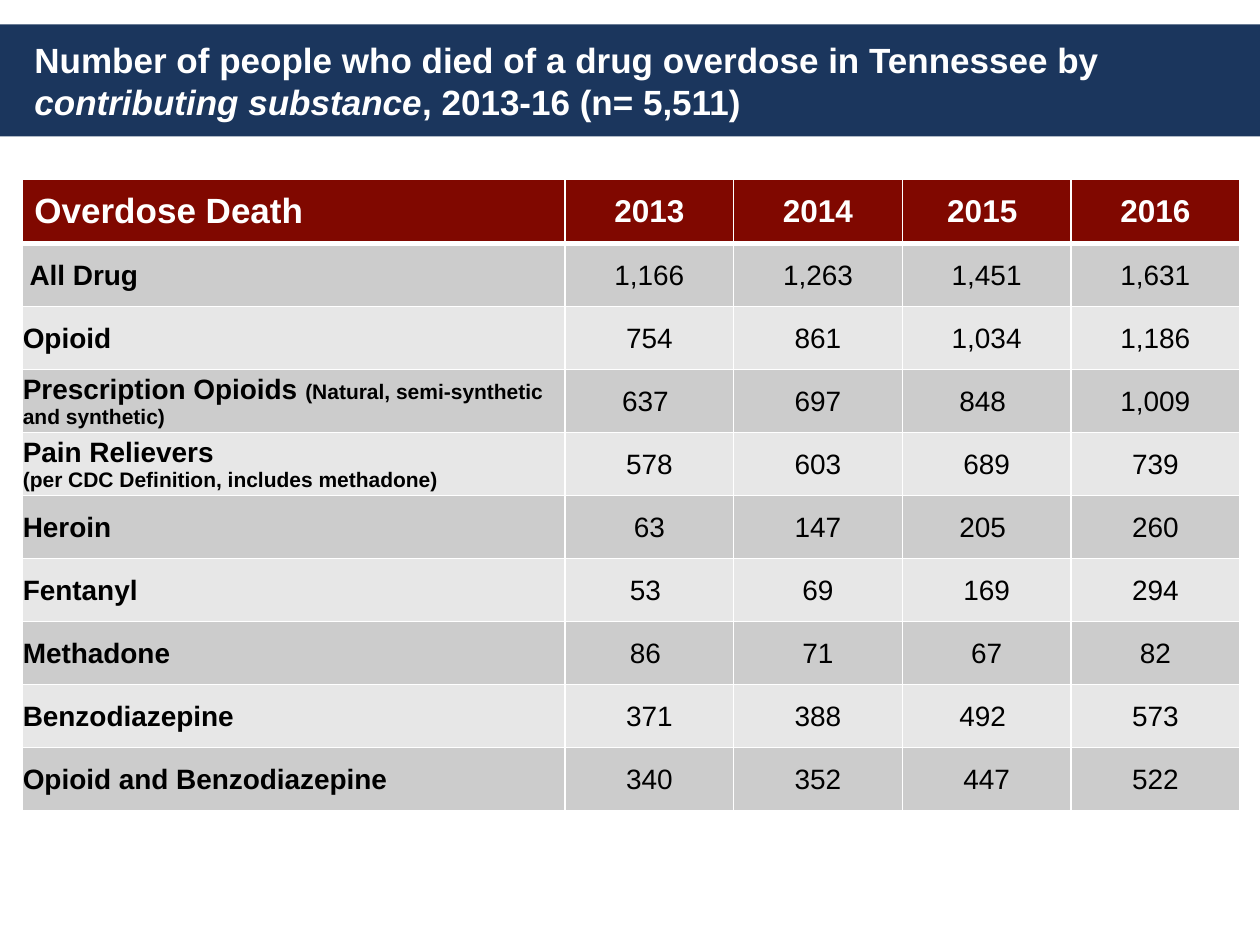
"""Build a slide with a table of Tennessee overdose deaths by substance."""

from dataclasses import dataclass

from lxml import etree
from pptx import Presentation
from pptx.dml.color import RGBColor
from pptx.enum.shapes import MSO_SHAPE
from pptx.enum.text import MSO_ANCHOR, MSO_AUTO_SIZE, PP_ALIGN
from pptx.oxml.ns import qn
from pptx.slide import Slide
from pptx.table import _Cell
from pptx.util import Cm, Pt

RECTANGLE = MSO_SHAPE.RECTANGLE
MIDDLE = MSO_ANCHOR.MIDDLE
NO_AUTOFIT = MSO_AUTO_SIZE.NONE
LEFT, CENTER = PP_ALIGN.LEFT, PP_ALIGN.CENTER

SLIDE_WIDTH, SLIDE_HEIGHT = Cm(25.4), Cm(19.05)
MARGIN = Cm(0.44)
CONTENT_WIDTH = Cm(24.55)
BAND_TOP, BAND_HEIGHT = Cm(0.49), Cm(2.26)
TABLE_TOP = Cm(3.61)
LABEL_WIDTH, YEAR_WIDTH = Cm(10.95), Cm(3.4)
HEADER_HEIGHT, ROW_HEIGHT = Cm(1.3), Cm(1.27)
CELL_INSET = Cm(0.02)


@dataclass(frozen=True)
class Theme:
    """Colours, font and type sizes of the slide."""

    font: str = "Arial"
    band: RGBColor = RGBColor(0x1B, 0x36, 0x5D)
    header: RGBColor = RGBColor(0x80, 0x08, 0x00)
    dark_row: RGBColor = RGBColor(0xCC, 0xCC, 0xCC)
    light_row: RGBColor = RGBColor(0xE7, 0xE7, 0xE7)
    white: RGBColor = RGBColor(0xFF, 0xFF, 0xFF)
    black: RGBColor = RGBColor(0, 0, 0)
    title_size: Pt = Pt(20)
    year_size: Pt = Pt(18)
    body_size: Pt = Pt(16)
    note_size: Pt = Pt(12)
    border: Pt = Pt(1)
    header_border: Pt = Pt(3)


@dataclass(frozen=True)
class Substance:
    """One table row: a substance and its deaths per year."""

    name: str
    deaths: tuple[str, ...]
    inline_note: str = ""
    note_below: str = ""


THEME = Theme()
YEARS = ("2013", "2014", "2015 ", "2016")
SUBSTANCES = (
    Substance(" All Drug", ("1,166", "1,263", "1,451", "1,631")),
    Substance("Opioid", ("754", " 861 ", "1,034", "1,186")),
    Substance("Prescription Opioids ", ("637 ", "697", "848 ", "1,009"),
              inline_note="(Natural, semi-synthetic and synthetic)"),
    Substance("Pain Relievers", ("578", "603", "689", "739"),
              note_below="(per CDC Definition, includes methadone)"),
    Substance("Heroin", ("63", "147", "205 ", "260")),
    Substance("Fentanyl", ("53 ", "69", "169", "294")),
    Substance("Methadone", ("86 ", "71", "67", "82")),
    Substance("Benzodiazepine", ("371", "388", "492 ", "573")),
    Substance("Opioid and Benzodiazepine", ("340", "352", "447", "522")),
)


def format_paragraph(paragraph, size: Pt, color: RGBColor, bold: bool, alignment=LEFT) -> None:
    """Set the font and alignment of a paragraph."""
    paragraph.alignment = alignment
    paragraph.font.name = THEME.font
    paragraph.font.size = size
    paragraph.font.bold = bold
    paragraph.font.color.rgb = color


def add_title(slide: Slide) -> None:
    """Write the title on a full-width band."""
    title = slide.shapes.title
    title.left, title.top = MARGIN, BAND_TOP
    title.width, title.height = CONTENT_WIDTH, BAND_HEIGHT
    band = slide.shapes.add_shape(RECTANGLE, 0, BAND_TOP, SLIDE_WIDTH, BAND_HEIGHT)
    band.shadow.inherit = False
    band.fill.solid()
    band.fill.fore_color.rgb = THEME.band
    band.line.fill.background()
    title.element.addprevious(band.element)

    frame = title.text_frame
    frame.auto_size = NO_AUTOFIT
    frame.vertical_anchor = MIDDLE
    paragraph = frame.paragraphs[0]
    format_paragraph(paragraph, THEME.title_size, THEME.white, True)
    paragraph.add_run().text = "Number of people who died of a drug overdose in Tennessee by "
    emphasis = paragraph.add_run()
    emphasis.text = "contributing substance"
    emphasis.font.italic = True
    paragraph.add_run().text = ", 2013-16 (n= 5,511)"


def style_cell(cell: _Cell, fill: RGBColor, top: Pt, bottom: Pt) -> None:
    """Give a cell its white borders, fill and vertical centring."""
    cell.vertical_anchor = MIDDLE
    properties = cell._tc.get_or_add_tcPr()
    widths = {"a:lnL": THEME.border, "a:lnR": THEME.border, "a:lnT": top, "a:lnB": bottom}
    for tag, width in widths.items():
        line = etree.SubElement(properties, qn(tag), w=str(width))
        solid = etree.SubElement(line, qn("a:solidFill"))
        etree.SubElement(solid, qn("a:srgbClr"), val=str(THEME.white))
    cell.fill.solid()
    cell.fill.fore_color.rgb = fill


def tighten_cell(cell: _Cell) -> None:
    """Reduce the cell margins to almost nothing."""
    cell.margin_left = cell.margin_right = cell.margin_top = CELL_INSET
    cell.margin_bottom = 0


def write_cell(cell: _Cell, text: str, size: Pt, color: RGBColor, bold: bool, alignment=LEFT) -> None:
    """Write one formatted paragraph in a cell."""
    paragraph = cell.text_frame.paragraphs[0]
    paragraph.add_run().text = text
    format_paragraph(paragraph, size, color, bold, alignment)


def write_substance(cell: _Cell, substance: Substance) -> None:
    """Write the name of a substance with its smaller note."""
    write_cell(cell, substance.name, THEME.body_size, THEME.black, True)
    if substance.inline_note:
        note = cell.text_frame.paragraphs[0].add_run()
        note.text = substance.inline_note
        note.font.size = THEME.note_size
    if substance.note_below:
        paragraph = cell.text_frame.add_paragraph()
        paragraph.add_run().text = substance.note_below
        format_paragraph(paragraph, THEME.note_size, THEME.black, True)


def add_deaths_table(slide: Slide) -> None:
    """Add the table of deaths by substance and year."""
    height = HEADER_HEIGHT + ROW_HEIGHT * len(SUBSTANCES)
    table = slide.shapes.add_table(len(SUBSTANCES) + 1, len(YEARS) + 1,
                                   MARGIN, TABLE_TOP, CONTENT_WIDTH, height).table
    table.horz_banding = False
    for index, column in enumerate(table.columns):
        column.width = YEAR_WIDTH if index else LABEL_WIDTH
    for index, row in enumerate(table.rows):
        row.height = ROW_HEIGHT if index else HEADER_HEIGHT
        fill = (THEME.dark_row if index % 2 else THEME.light_row) if index else THEME.header
        top = THEME.header_border if index == 1 else THEME.border
        bottom = THEME.border if index else THEME.header_border
        for cell in row.cells:
            style_cell(cell, fill, top, bottom)

    write_cell(table.cell(0, 0), "Overdose Death", THEME.title_size, THEME.white, True)
    for column, year in enumerate(YEARS, 1):
        cell = table.cell(0, column)
        tighten_cell(cell)
        write_cell(cell, year, THEME.year_size, THEME.white, True, CENTER)
    for row, substance in enumerate(SUBSTANCES, 1):
        for cell in table.rows[row].cells:
            tighten_cell(cell)
        write_substance(table.cell(row, 0), substance)
        for column, count in enumerate(substance.deaths, 1):
            write_cell(table.cell(row, column), count, THEME.body_size, THEME.black, False, CENTER)


def main() -> None:
    """Build and save the presentation."""
    presentation = Presentation()
    presentation.slide_width, presentation.slide_height = SLIDE_WIDTH, SLIDE_HEIGHT
    slide = presentation.slides.add_slide(presentation.slide_layouts[5])
    add_title(slide)
    add_deaths_table(slide)
    presentation.save("out.pptx")


if __name__ == "__main__":
    main()
